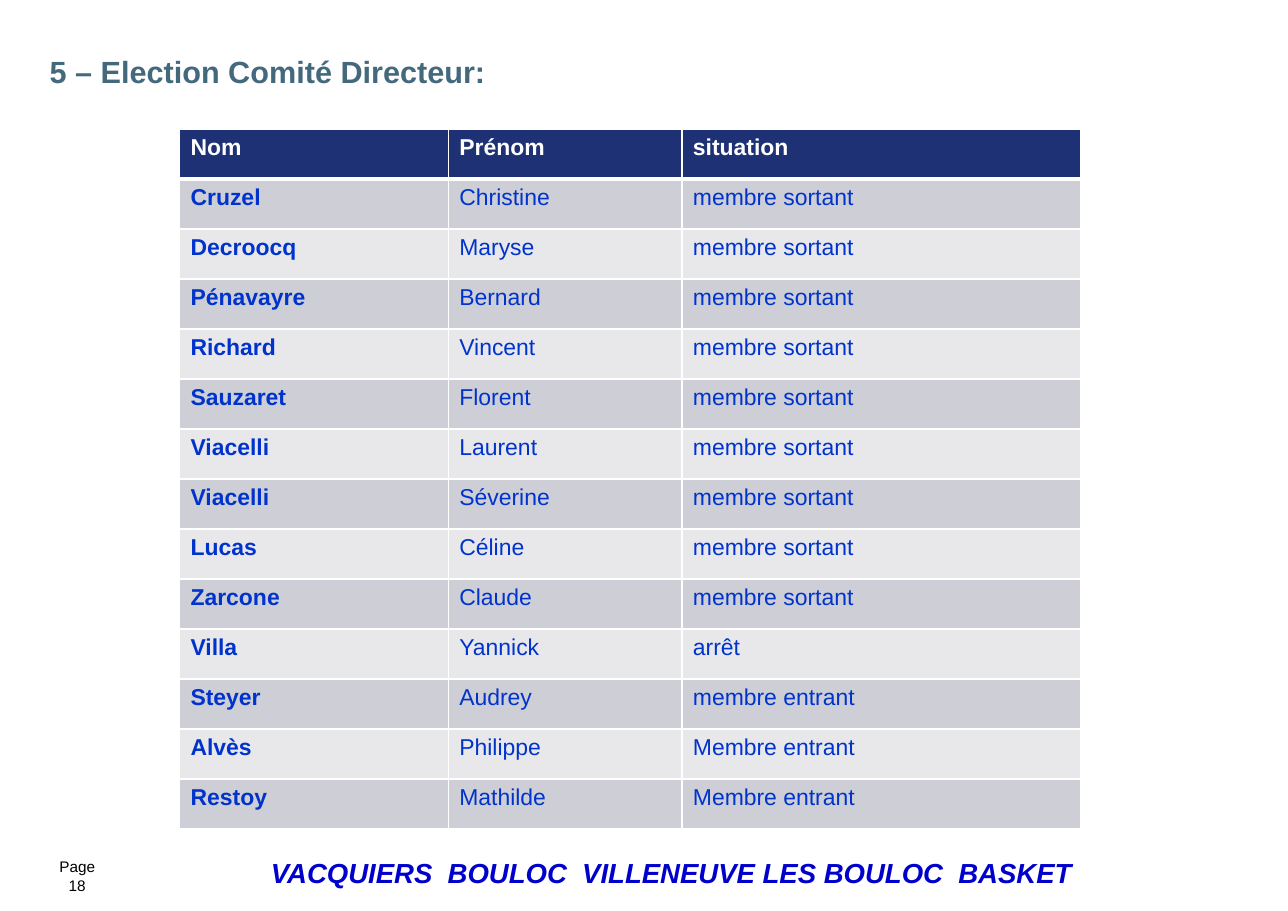
import pptx
import pptx.dml.color
import pptx.enum.text
import pptx.oxml
import pptx.oxml.ns
import pptx.util

RGBColor = pptx.dml.color.RGBColor
WHITE = RGBColor(0xFF, 0xFF, 0xFF)
BLACK = RGBColor(0x00, 0x00, 0x00)
SLATE = RGBColor(0x44, 0x69, 0x7D)
NAVY = RGBColor(0x1E, 0x31, 0x74)
FOOTER_BLUE = RGBColor(0x00, 0x00, 0xCC)
CELL_BLUE = RGBColor(0x00, 0x33, 0xCC)
BANDS = (RGBColor(0xCD, 0xCE, 0xD6), RGBColor(0xE8, 0xE8, 0xEB))

SLIDE_WIDTH = pptx.util.Inches(11.69)
SLIDE_HEIGHT = pptx.util.Inches(8.27)
CENTER = pptx.enum.text.PP_ALIGN.CENTER
MIDDLE = pptx.enum.text.MSO_ANCHOR.MIDDLE

FRAME_FORMAT = {
    "word_wrap": True, "vertical_anchor": MIDDLE,
    "margin_left": 0, "margin_right": 0, "margin_top": 0, "margin_bottom": 0,
}
COLUMN_SHARES = (20.87, 18.14, 30.97)
ROW_SHARE = 5.49
HEADINGS = ("Nom", "Prénom", "situation")
MEMBERS = (
    ("Cruzel", "Christine", "membre sortant"),
    ("Decroocq", "Maryse", "membre sortant"),
    ("Pénavayre", "Bernard", "membre sortant"),
    ("Richard", "Vincent", "membre sortant"),
    ("Sauzaret", "Florent", "membre sortant"),
    ("Viacelli", "Laurent", "membre sortant"),
    ("Viacelli", "Séverine", "membre sortant"),
    ("Lucas", "Céline", "membre sortant"),
    ("Zarcone", "Claude", "membre sortant"),
    ("Villa", "Yannick", "arrêt"),
    ("Steyer", "Audrey", "membre entrant"),
    ("Alvès", "Philippe", "Membre entrant"),
    ("Restoy", "Mathilde", "Membre entrant"),
)


def across(percent):
    return round(SLIDE_WIDTH * percent / 100)


def down(percent):
    return round(SLIDE_HEIGHT * percent / 100)


def apply_format(target, values):
    for name, value in values.items():
        setattr(target, name, value)


def write_text(paragraph, text, size, color, **font_format):
    run = paragraph.add_run()
    run.text = text
    apply_format(run.font, {"name": "Arial", "size": pptx.util.Pt(size), **font_format})
    run.font.color.rgb = color


def add_text(slide, place, text, size, color, paragraph_format, **font_format):
    left, top, width, height = place
    shape = slide.shapes.add_textbox(across(left), down(top), across(width), down(height))
    apply_format(shape.text_frame, FRAME_FORMAT)
    paragraph = shape.text_frame.paragraphs[0]
    apply_format(paragraph, paragraph_format)
    write_text(paragraph, text, size, color, **font_format)


def set_borders(cell, top, bottom):
    properties = cell._tc.get_or_add_tcPr()
    widths = {"lnL": 1, "lnR": 1, "lnT": top, "lnB": bottom}
    for position, (side, width) in enumerate(widths.items()):
        border = pptx.oxml.parse_xml(
            f'<a:{side} {pptx.oxml.ns.nsdecls("a")} w="{pptx.util.Pt(width)}">'
            f'<a:solidFill><a:srgbClr val="{WHITE}"/></a:solidFill></a:{side}>'
        )
        properties.insert(position, border)


def fill_cell(cell, text, fill, color, bold, top=1, bottom=1):
    cell.fill.solid()
    cell.fill.fore_color.rgb = fill
    set_borders(cell, top, bottom)
    write_text(cell.text_frame.paragraphs[0], text, 15, color, bold=bold)


def add_committee_table(slide, left, top):
    row_count = len(MEMBERS) + 1
    table = slide.shapes.add_table(
        row_count, len(HEADINGS), across(left), down(top),
        across(sum(COLUMN_SHARES)), down(ROW_SHARE * row_count),
    ).table
    table.horz_banding = False
    for column, share in zip(table.columns, COLUMN_SHARES):
        column.width = across(share)
    for row in table.rows:
        row.height = down(ROW_SHARE)
    for column, heading in enumerate(HEADINGS):
        fill_cell(table.cell(0, column), heading, NAVY, WHITE, True, bottom=3)
    for row, member in enumerate(MEMBERS, start=1):
        for column, text in enumerate(member):
            fill_cell(table.cell(row, column), text, BANDS[(row - 1) % 2],
                      CELL_BLUE, column == 0, top=3 if row == 1 else 1)


def main():
    presentation = pptx.Presentation()
    apply_format(presentation, {"slide_width": SLIDE_WIDTH, "slide_height": SLIDE_HEIGHT})
    slide = presentation.slides.add_slide(presentation.slide_layouts[6])
    add_text(slide, (8.13, 93.95, 88.02, 3.63),
             "VACQUIERS  BOULOC  VILLENEUVE LES BOULOC  BASKET",
             18, FOOTER_BLUE, {"alignment": CENTER}, bold=True, italic=True)
    add_text(slide, (3.85, 94.56, 4.28, 3.14), "Page 18", 10, BLACK, {"alignment": CENTER})
    add_committee_table(slide, 13.94, 14.15)
    add_text(slide, (3.85, 4.72, 92.22, 6.65), "5 – Election Comité Directeur:",
             20, SLATE, {"line_spacing": 0.95}, bold=True)
    presentation.save("out.pptx")


if __name__ == "__main__":
    main()
